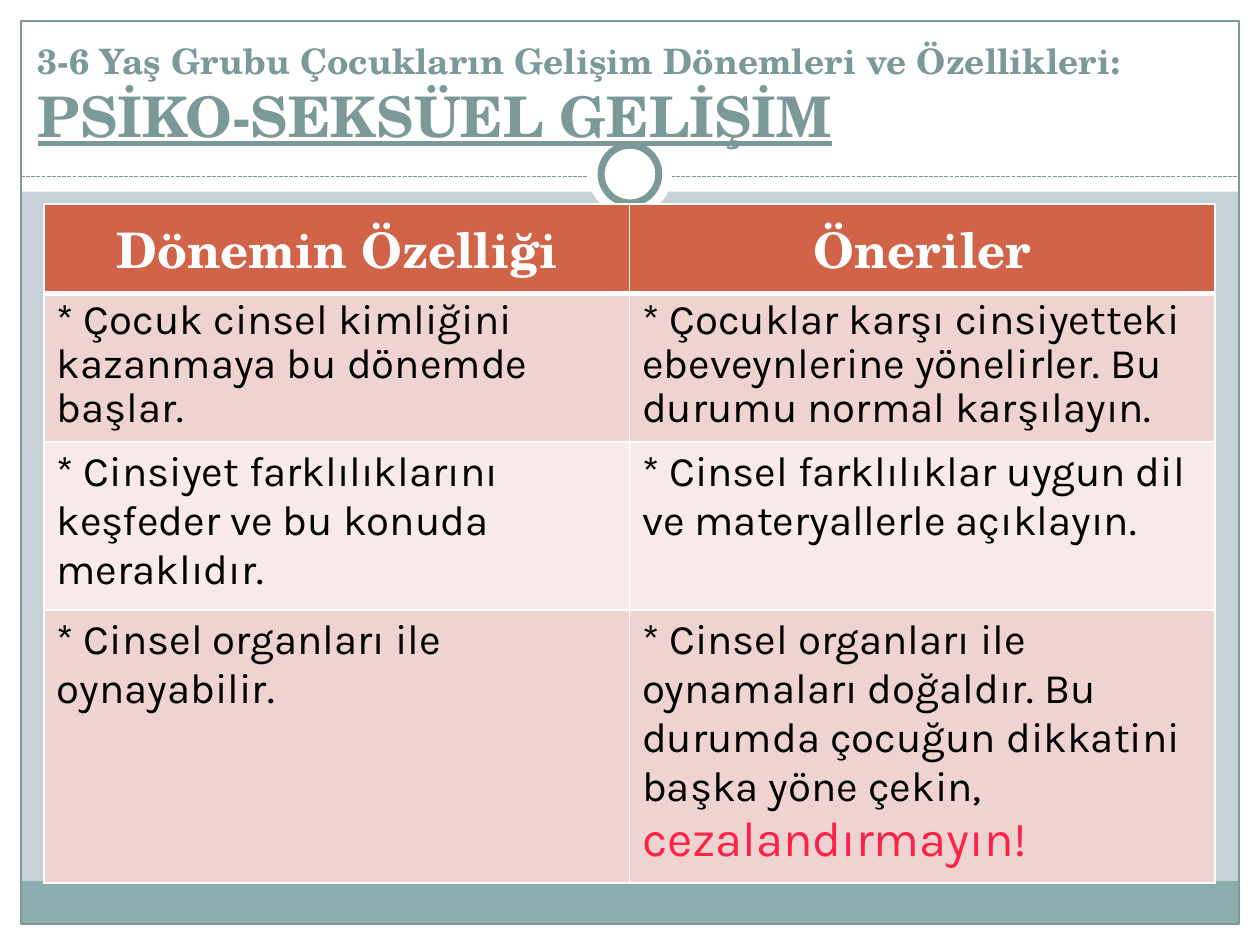
from dataclasses import dataclass

from lxml import etree
from pptx import Presentation
from pptx.dml.color import RGBColor
from pptx.enum import dml, shapes, text
from pptx.oxml import ns
from pptx.util import Pt


@dataclass(frozen=True)
class Theme:
    background: str = "C5D1D7"
    white: str = "FFFFFF"
    black: str = "000000"
    frame: str = "7C999A"
    footer: str = "8CADAE"
    header: str = "D16349"
    band_dark: str = "EED3D0"
    band_light: str = "F7EAE9"
    warning: str = "FB2347"
    heading_font: str = "TeX Gyre Schola"
    body_font: str = "Karla"
    small: int = 20
    body: int = 24
    large: int = 28
    title: int = 32


THEME = Theme()
WIDTH, HEIGHT, MARGIN = 720, 540, 12
RULE_Y = 101

HEADERS = ["Dönemin Özelliği", "Öneriler"]
ROWS = [
    ["* Çocuk cinsel kimliğini kazanmaya bu dönemde başlar.",
     "* Çocuklar karşı cinsiyetteki ebeveynlerine yönelirler. Bu durumu normal karşılayın."],
    ["* Cinsiyet farklılıklarını keşfeder ve bu konuda meraklıdır.",
     "* Cinsel farklılıklar uygun dil ve materyallerle açıklayın."],
    ["* Cinsel organları ile oynayabilir.",
     "* Cinsel organları ile oynamaları doğaldır. Bu durumda çocuğun dikkatini başka yöne çekin, "],
]
WARNING = "cezalandırmayın!"
ROW_HEIGHTS = [51, 82, 96, 152]


def color(value):
    return RGBColor.from_string(value)


def add_panel(slide, kind, left, top, width, height, fill=None, line=None, weight=0.75):
    shape = slide.shapes.add_shape(kind, Pt(left), Pt(top), Pt(width), Pt(height))
    shape.shadow.inherit = False
    if fill:
        shape.fill.solid()
        shape.fill.fore_color.rgb = color(fill)
    else:
        shape.fill.background()
    if line:
        shape.line.color.rgb = color(line)
        shape.line.width = Pt(weight)
    else:
        shape.line.fill.background()


def add_dashed_rule(slide):
    rule = slide.shapes.add_connector(
        shapes.MSO_CONNECTOR.STRAIGHT, Pt(MARGIN), Pt(RULE_Y), Pt(WIDTH - MARGIN), Pt(RULE_Y))
    rule.line.color.rgb = color(THEME.frame)
    rule.line.width = Pt(0.75)
    rule.line.dash_style = dml.MSO_LINE.SQUARE_DOT
    etree.SubElement(rule._element.spPr, ns.qn("a:effectLst"))


def add_frame(slide):
    rectangle, oval = shapes.MSO_SHAPE.RECTANGLE, shapes.MSO_SHAPE.OVAL
    for box in [(0, HEIGHT - MARGIN, WIDTH, MARGIN), (0, 0, WIDTH, 109.5),
                (0, 0, MARGIN, HEIGHT), (WIDTH - MARGIN, 0, MARGIN, HEIGHT)]:
        add_panel(slide, rectangle, *box, fill=THEME.white)
    inner_width, inner_height = WIDTH - 2 * MARGIN, HEIGHT - 2 * MARGIN
    add_panel(slide, rectangle, MARGIN, 503.5, inner_width, 24.5, fill=THEME.footer)
    add_panel(slide, rectangle, MARGIN, MARGIN, inner_width, inner_height, line=THEME.frame)
    add_dashed_rule(slide)
    for size, line in [(48, None), (33, THEME.frame)]:
        add_panel(slide, oval, (WIDTH - size) / 2, 99.5 - size / 2, size, size,
                  fill=THEME.white, line=line, weight=4)


def format_run(run, size, name, ink, bold=False):
    font = run.font
    font.size, font.name, font.bold = Pt(size), name, bold
    font.color.rgb = color(ink)


def add_title(slide):
    box = slide.shapes.add_textbox(Pt(14.4), Pt(3.6), Pt(705.6), Pt(85))
    frame = box.text_frame
    frame.word_wrap = True
    frame.vertical_anchor = text.MSO_ANCHOR.BOTTOM
    frame.text = "3-6 Yaş Grubu Çocukların Gelişim Dönemleri ve Özellikleri:\vPSİKO-SEKSÜEL GELİŞİM"
    lead, topic = frame.paragraphs[0].runs
    format_run(lead, THEME.small, THEME.heading_font, THEME.frame, True)
    format_run(topic, THEME.title, THEME.heading_font, THEME.frame, True)
    topic.font.underline = True


def set_borders(cell, bottom):
    properties = cell._tc.get_or_add_tcPr()
    for position, (side, weight) in enumerate([("L", 1), ("R", 1), ("T", 1), ("B", bottom)]):
        border = etree.Element(ns.qn(f"a:ln{side}"), w=str(Pt(weight)))
        fill = etree.SubElement(border, ns.qn("a:solidFill"))
        etree.SubElement(fill, ns.qn("a:srgbClr"), val=THEME.white)
        properties.insert(position, border)


def fill_cell(cell, content, fill, bottom=1):
    cell.fill.solid()
    cell.fill.fore_color.rgb = color(fill)
    set_borders(cell, bottom)
    cell.text_frame.text = content
    return cell.text_frame.paragraphs[0]


def add_table(slide):
    table = slide.shapes.add_table(
        len(ROWS) + 1, len(HEADERS), Pt(25.2), Pt(116.6), Pt(669), Pt(sum(ROW_HEIGHTS))).table
    for row, height in zip(table.rows, ROW_HEIGHTS):
        row.height = Pt(height)
    for column, header in enumerate(HEADERS):
        cell = table.cell(0, column)
        paragraph = fill_cell(cell, header, THEME.header, bottom=3)
        cell.vertical_anchor = text.MSO_ANCHOR.MIDDLE
        paragraph.alignment = text.PP_ALIGN.CENTER
        format_run(paragraph.runs[0], THEME.large, THEME.heading_font, THEME.white, True)
    for index, contents in enumerate(ROWS, start=1):
        fill = THEME.band_dark if index % 2 else THEME.band_light
        for column, content in enumerate(contents):
            paragraph = fill_cell(table.cell(index, column), content, fill)
            paragraph.line_spacing = 0.9 if index == 1 else 1.0
            format_run(paragraph.runs[0], THEME.body, THEME.body_font, THEME.black)
    warning = paragraph.add_run()
    warning.text = WARNING
    format_run(warning, THEME.large, THEME.body_font, THEME.warning)


def main():
    presentation = Presentation()
    presentation.slide_width, presentation.slide_height = Pt(WIDTH), Pt(HEIGHT)
    slide = presentation.slides.add_slide(presentation.slide_layouts[6])
    slide.background.fill.solid()
    slide.background.fill.fore_color.rgb = color(THEME.background)
    add_frame(slide)
    add_title(slide)
    add_table(slide)
    presentation.save("out.pptx")


if __name__ == "__main__":
    main()
